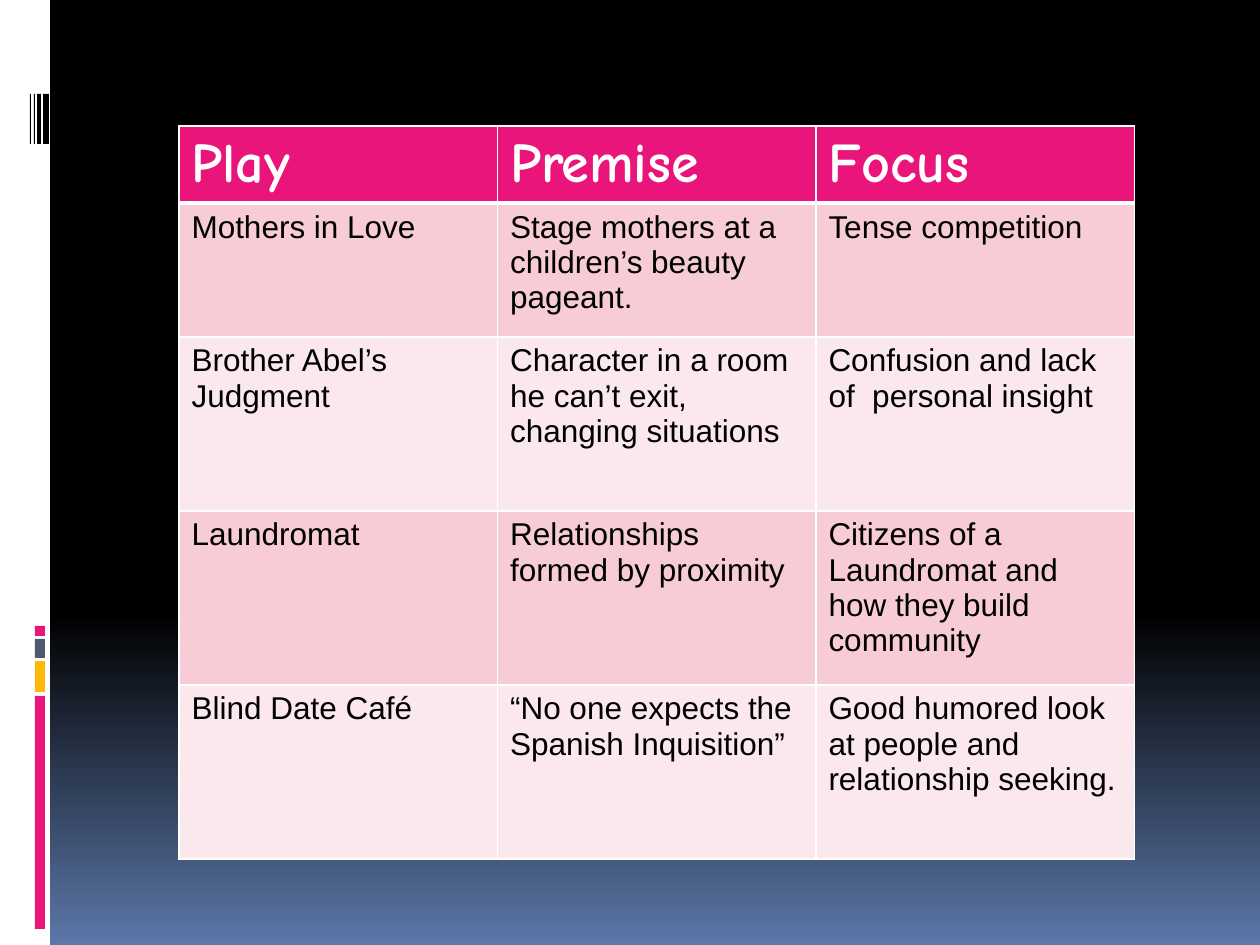
from lxml import etree
from pptx import Presentation
from pptx.dml.color import RGBColor
from pptx.enum.shapes import MSO_SHAPE
from pptx.oxml.ns import qn
from pptx.util import Pt

RECTANGLE = MSO_SHAPE.RECTANGLE
EMU_PER_PX = 914400 / 126

WHITE = RGBColor(0xFF, 0xFF, 0xFF)
BLACK = RGBColor(0, 0, 0)
PINK = RGBColor(0xEA, 0x15, 0x7A)
AMBER = RGBColor(0xFE, 0xB8, 0x0A)
SLATE = RGBColor(0x4E, 0x5B, 0x6F)
BLUE = RGBColor(0x5B, 0x77, 0xA8)
BANDS = (RGBColor(0xF7, 0xCC, 0xD7), RGBColor(0xFB, 0xE8, 0xEC))

PAGE_WIDTH, PAGE_HEIGHT = 1260, 945
TABLE_LEFT, TABLE_TOP = 179, 126
COLUMN_WIDTH = 318.5
ROW_HEIGHTS = (77, 134, 174, 174, 174)

PLAYS = [
    ("Play", "Premise", "Focus"),
    ("Mothers in Love", "Stage mothers at a children’s beauty pageant.",
     "Tense competition"),
    ("Brother Abel’s Judgment",
     "Character in a room he can’t exit, changing situations",
     "Confusion and lack of  personal insight"),
    ("Laundromat", "Relationships formed by proximity",
     "Citizens of a Laundromat and how they build community"),
    ("Blind Date Café", "“No one expects the Spanish Inquisition”",
     "Good humored look at people and relationship seeking."),
]

# (top, height, colour) of the blocks low on the side strip
COLOR_BLOCKS = [(696, 233, PINK), (661, 31, AMBER), (639, 19, SLATE), (626, 10, PINK)]
# (left, width) of the thin bars high on the side strip
BARCODE = [(43, 6), (37, 4), (34, 1), (30, 1)]


def px(length):
    return round(length * EMU_PER_PX)


def add_block(page, left, top, width, height, color):
    block = page.shapes.add_shape(RECTANGLE, px(left), px(top), px(width), px(height))
    block.shadow.inherit = False
    block.fill.solid()
    block.fill.fore_color.rgb = color
    block.line.fill.background()


def set_borders(cell, bottom_width):
    """Draw white borders, 1 pt except at the bottom, ahead of the cell's fill."""
    properties = cell._tc.get_or_add_tcPr()
    widths = {"a:lnL": 1, "a:lnR": 1, "a:lnT": 1, "a:lnB": bottom_width}
    for position, (tag, width) in enumerate(widths.items()):
        line = etree.Element(qn(tag), w=str(Pt(width)))
        fill = etree.SubElement(line, qn("a:solidFill"))
        etree.SubElement(fill, qn("a:srgbClr"), val=str(WHITE))
        properties.insert(position, line)


def paint_background(page):
    fill = page.background.fill
    fill.gradient()
    fill.gradient_angle = 270
    for stop, position, color in zip(fill.gradient_stops, (0.65, 1), (BLACK, BLUE)):
        stop.position = position
        stop.color.rgb = color


def add_side_strip(page):
    add_block(page, 0, 0, 50, PAGE_HEIGHT, WHITE)
    for top, height, color in COLOR_BLOCKS:
        add_block(page, 35, top, 10, height, color)
    for left, width in BARCODE:
        add_block(page, left, 94, width, 50, BLACK)


def add_play_table(page):
    columns = len(PLAYS[0])
    table = page.shapes.add_table(
        len(PLAYS), columns, px(TABLE_LEFT), px(TABLE_TOP),
        px(COLUMN_WIDTH * columns), px(sum(ROW_HEIGHTS))).table
    for column in table.columns:
        column.width = px(COLUMN_WIDTH)
    for index, (texts, height) in enumerate(zip(PLAYS, ROW_HEIGHTS)):
        table.rows[index].height = px(height)
        header = index == 0
        for cell, text in zip(table.rows[index].cells, texts):
            cell.text = text
            cell.fill.solid()
            cell.fill.fore_color.rgb = PINK if header else BANDS[(index - 1) % 2]
            set_borders(cell, 3 if header else 1)
            font = cell.text_frame.paragraphs[0].font
            font.name = "Comic Neue" if header else "Arial"
            font.size = Pt(32 if header else 18)
            font.bold = header
            font.color.rgb = WHITE if header else BLACK


def main():
    deck = Presentation()
    deck.slide_width, deck.slide_height = px(PAGE_WIDTH), px(PAGE_HEIGHT)
    page = deck.slides.add_slide(deck.slide_layouts[6])
    paint_background(page)
    add_side_strip(page)
    add_play_table(page)
    deck.save("out.pptx")


if __name__ == "__main__":
    main()
